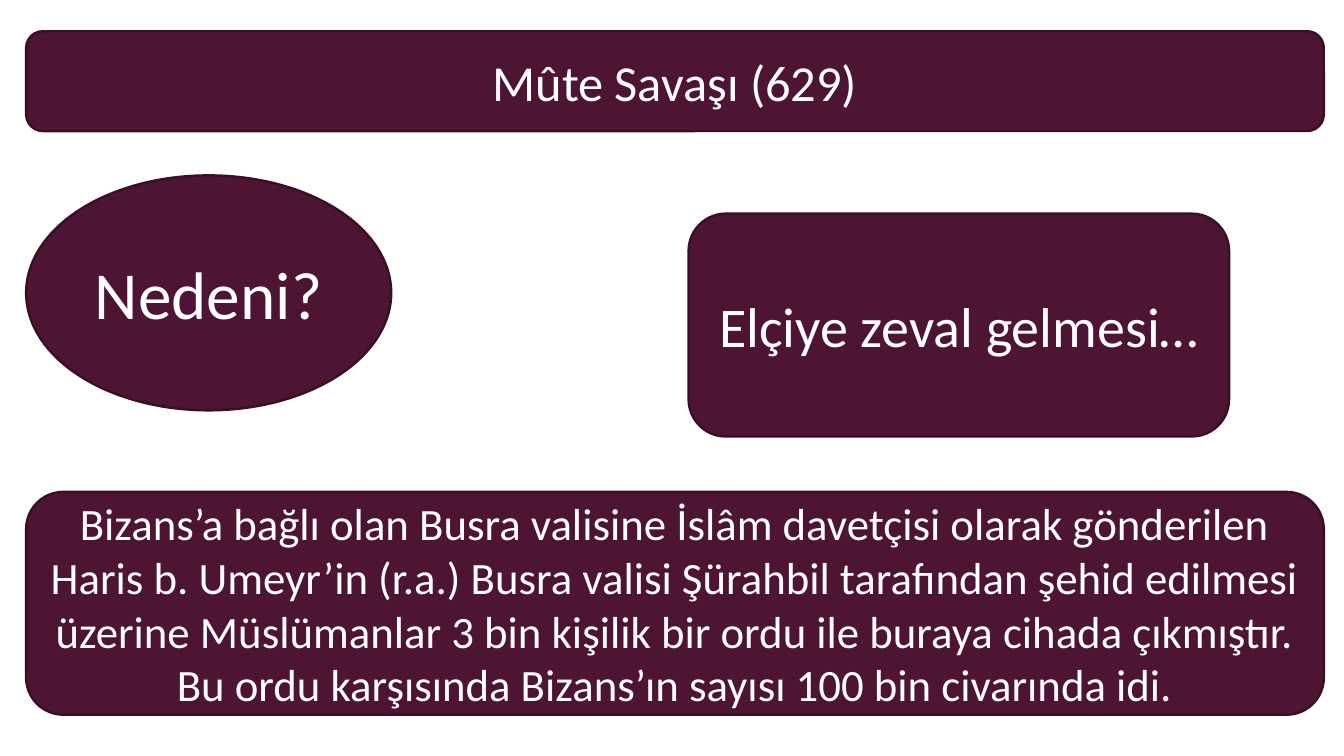
from dataclasses import dataclass

from pptx import Presentation
from pptx.dml.color import RGBColor
from pptx.enum.shapes import MSO_SHAPE
from pptx.enum.text import MSO_ANCHOR, PP_ALIGN
from pptx.slide import Slide
from pptx.util import Inches, Pt

SLIDE_WIDTH, SLIDE_HEIGHT = Inches(13.33), Inches(7.5)
COLOURS = {"plum": "4D1434", "edge": "390F26", "text": "FFFFFF"}
FONT = "Calibri"

# Shared positions, in percent of the slide's width or height
MARGIN = 1.95
FULL_WIDTH = 96.55
PANEL_HEIGHT = 29.47


@dataclass(frozen=True)
class Panel:
    """A filled shape with text; lengths are percent of the slide's size."""
    text: str
    size: int
    left: float
    top: float
    width: float
    height: float
    outline: MSO_SHAPE = MSO_SHAPE.ROUNDED_RECTANGLE


PANELS = [
    # Heading
    Panel("Mûte Savaşı (629)", 36, MARGIN, 4.13, FULL_WIDTH, 13.2),
    # Question and answer
    Panel("Nedeni?", 48, MARGIN, 23.2, 27.16, 31.07, MSO_SHAPE.OVAL),
    Panel("Elçiye zeval gelmesi…", 40, 51.24, 28.27, 40.21, PANEL_HEIGHT),
    # Explanation
    Panel(
        "Bizans’a bağlı olan Busra valisine İslâm davetçisi olarak gönderilen "
        "Haris b. Umeyr’in (r.a.) Busra valisi Şürahbil tarafından şehid edilmesi "
        "üzerine Müslümanlar 3 bin kişilik bir ordu ile buraya cihada çıkmıştır. "
        "Bu ordu karşısında Bizans’ın sayısı 100 bin civarında idi.",
        32, MARGIN, 65.07, FULL_WIDTH, PANEL_HEIGHT,
    ),
]


def colour(name: str) -> RGBColor:
    return RGBColor.from_string(COLOURS[name])


def across(percent: float) -> int:
    return round(SLIDE_WIDTH * percent / 100)


def down(percent: float) -> int:
    return round(SLIDE_HEIGHT * percent / 100)


def draw_panel(slide: Slide, panel: Panel) -> None:
    shape = slide.shapes.add_shape(
        panel.outline, across(panel.left), down(panel.top),
        across(panel.width), down(panel.height),
    )
    shape.shadow.inherit = False
    shape.fill.solid()
    shape.fill.fore_color.rgb = colour("plum")
    shape.line.color.rgb = colour("edge")
    shape.line.width = Pt(1.75)

    frame = shape.text_frame
    frame.text = panel.text
    frame.word_wrap = True
    frame.vertical_anchor = MSO_ANCHOR.MIDDLE
    paragraph = frame.paragraphs[0]
    paragraph.alignment = PP_ALIGN.CENTER
    font = paragraph.runs[0].font
    font.name = FONT
    font.size = Pt(panel.size)
    font.color.rgb = colour("text")


def main() -> None:
    presentation = Presentation()
    presentation.slide_width = SLIDE_WIDTH
    presentation.slide_height = SLIDE_HEIGHT
    slide = presentation.slides.add_slide(presentation.slide_layouts[6])
    for panel in PANELS:
        draw_panel(slide, panel)
    presentation.save("out.pptx")


if __name__ == "__main__":
    main()
